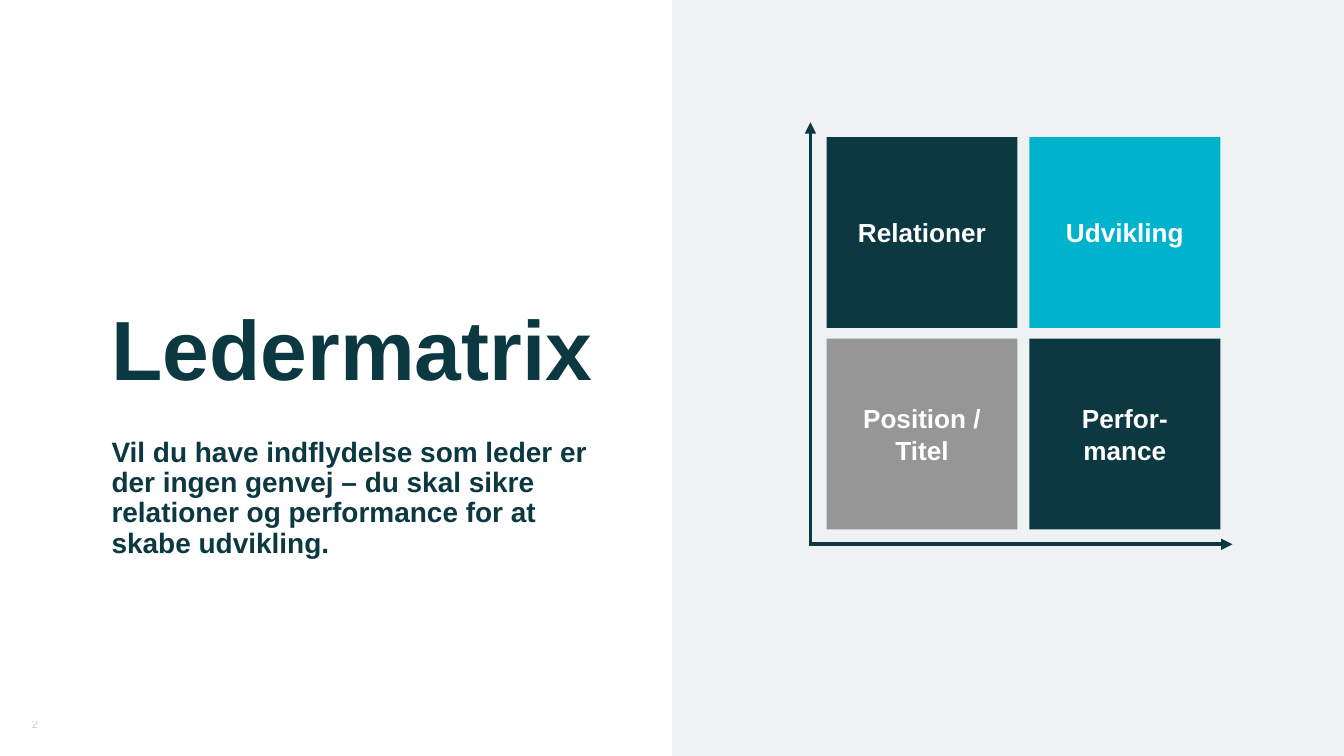
"""Build the Ledermatrix slide: a title and message beside a two-by-two matrix with axes."""
from dataclasses import dataclass

from lxml.etree import SubElement
from pptx import Presentation
from pptx.dml.color import RGBColor
from pptx.enum.shapes import MSO_CONNECTOR, MSO_SHAPE
from pptx.enum.text import MSO_ANCHOR, PP_ALIGN
from pptx.oxml.ns import qn
from pptx.util import Inches, Pt


@dataclass(frozen=True)
class Theme:
    font: str = "Arial"
    dark: str = "0B3841"
    cyan: str = "00B3CC"
    grey: str = "969696"
    panel: str = "EEF2F3"
    white: str = "FFFFFF"
    title: float = 45
    message: float = 15
    label: float = 14
    number: float = 6


theme = Theme()


def add_block(page, area, color):
    block = page.shapes.add_shape(MSO_SHAPE.RECTANGLE, *map(Inches, area))
    block.shadow.inherit = False
    block.fill.solid()
    block.fill.fore_color.rgb = RGBColor.from_string(color)
    block.line.fill.background()


def add_text(page, area, text, size, color, bold=True, anchor=MSO_ANCHOR.TOP,
             align=PP_ALIGN.LEFT, spacing=1.0):
    box = page.shapes.add_textbox(*map(Inches, area))
    frame = box.text_frame
    frame_format = {"word_wrap": True, "vertical_anchor": anchor, "margin_left": 0,
                    "margin_top": 0, "margin_right": 0, "margin_bottom": 0}
    for name, value in frame_format.items():
        setattr(frame, name, value)
    para = frame.paragraphs[0]
    para.alignment = align
    para.line_spacing = spacing
    span = para.add_run()
    span.text = text
    for name, value in {"name": theme.font, "size": Pt(size), "bold": bold}.items():
        setattr(span.font, name, value)
    span.font.color.rgb = RGBColor.from_string(color)
    return span


page_width = 10
page_height = page_width * 9 / 16
deck = Presentation()
deck.slide_width = Inches(page_width)
deck.slide_height = Inches(page_height)
page = deck.slides.add_slide(deck.slide_layouts[6])

add_block(page, (page_width / 2, 0, page_width / 2, page_height), theme.panel)
add_text(page, (0.83, 0.46, 3.78, 2.51), "Ledermatrix", theme.title, theme.dark,
         anchor=MSO_ANCHOR.BOTTOM, spacing=0.9)
add_text(page, (0.83, 3.26, 3.78, 1.91),
         "Vil du have indflydelse som leder er der ingen genvej – du skal sikre "
         "relationer og performance for at skabe udvikling.",
         theme.message, theme.dark, spacing=0.9)
number = add_text(page, (0, 5.25, 0.52, 0.19), "2", theme.number, theme.grey, bold=False,
                  anchor=MSO_ANCHOR.BOTTOM, align=PP_ALIGN.CENTER)
SubElement(next(number.font._element.iter(qn("a:srgbClr"))), qn("a:alpha"), val="50000")

matrix_left, matrix_top = 6.15, 1.02
side, column_pitch, row_pitch = 1.42, 1.51, 1.5
label_width, line_height = 0.98, 0.24
matrix = [
    [("Relationer", theme.dark, 1), ("Udvikling", theme.cyan, 1)],
    [("Position / Titel", theme.grey, 2), ("Perfor-mance", theme.dark, 2)],
]
for row, cells in enumerate(matrix):
    for column, (label, color, lines) in enumerate(cells):
        left = matrix_left + column * column_pitch
        top = matrix_top + row * row_pitch
        height = lines * line_height
        add_block(page, (left, top, side, side), color)
        add_text(page, (left + (side - label_width) / 2, top + (side - height) / 2,
                        label_width, height),
                 label, theme.label, theme.white,
                 anchor=MSO_ANCHOR.MIDDLE, align=PP_ALIGN.CENTER)

axes = [(6.03, 4.06, 6.03, 0.91), (6.02, 4.05, 9.17, 4.05)]
for ends in axes:
    axis = page.shapes.add_connector(MSO_CONNECTOR.STRAIGHT, *map(Inches, ends))
    axis.line.width = Pt(2)
    axis.line.color.rgb = RGBColor.from_string(theme.dark)
    SubElement(axis.line._get_or_add_ln(), qn("a:tailEnd"), type="triangle")
    SubElement(axis._element.spPr, qn("a:effectLst"))

deck.save("out.pptx")
